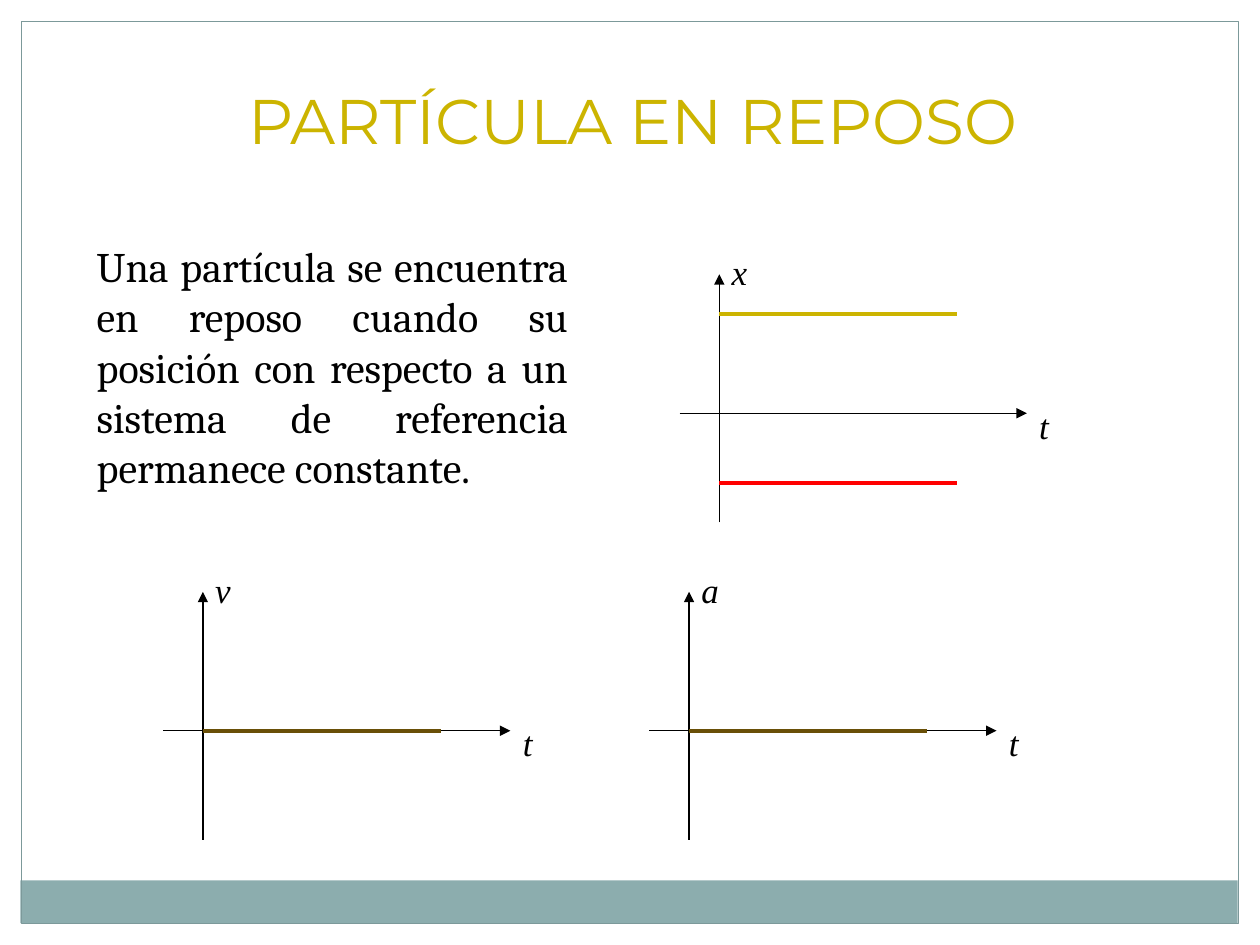
import pptx
import pptx.dml.color
import pptx.enum.shapes
import pptx.enum.text
import pptx.oxml
import pptx.oxml.ns
import pptx.util
from pptx.util import Cm

THEME = {
    "black": "000000", "gold": "CCB400", "red": "FF0000", "brown": "694F07",
    "band": "8CADAE", "frame": "7C999A",
    "title_font": "Montserrat", "body_font": "Cambria", "label_font": "Times New Roman",
    "title_size": 36, "body_size": 24, "label_size": 20,
    "thin": 0.75, "thick": 2.25,
}


def write(shape, text, role, color, alignment, italic=False):
    frame = shape.text_frame
    frame.text = text
    frame.word_wrap = True
    frame.vertical_anchor = pptx.enum.text.MSO_ANCHOR.TOP
    paragraph = frame.paragraphs[0]
    paragraph.alignment = alignment
    font = paragraph.runs[0].font
    font.name = THEME[role + "_font"]
    font.size = pptx.util.Pt(THEME[role + "_size"])
    font.italic = italic
    font.color.rgb = pptx.dml.color.RGBColor.from_string(THEME[color])


def draw_line(shapes, start, end, color, width, arrow=False):
    connector = shapes.add_connector(
        pptx.enum.shapes.MSO_CONNECTOR.STRAIGHT,
        *(Cm(value) for value in (*start, *end)))
    connector.line.color.rgb = pptx.dml.color.RGBColor.from_string(THEME[color])
    connector.line.width = pptx.util.Pt(THEME[width])
    properties = connector._element.spPr
    if arrow:
        head = pptx.oxml.parse_xml(
            '<a:tailEnd %s type="triangle"/>' % pptx.oxml.ns.nsdecls("a"))
        connector.line._get_or_add_ln().append(head)
    properties.append(pptx.oxml.parse_xml(
        "<a:effectLst %s/>" % pptx.oxml.ns.nsdecls("a")))


presentation = pptx.Presentation()
presentation.slide_width = Cm(25.4)
presentation.slide_height = Cm(19.05)
slide = presentation.slides.add_slide(presentation.slide_layouts[5])
align = pptx.enum.text.PP_ALIGN

# Bottom band and slide frame
rectangle = pptx.enum.shapes.MSO_SHAPE.RECTANGLE
band = slide.shapes.add_shape(rectangle, Cm(0.41), Cm(17.75), Cm(24.54), Cm(0.86))
band.fill.solid()
band.fill.fore_color.rgb = pptx.dml.color.RGBColor.from_string(THEME["band"])
band.line.fill.background()
border = slide.shapes.add_shape(rectangle, Cm(0.43), Cm(0.43), Cm(24.54), Cm(18.19))
border.fill.background()
border.line.color.rgb = pptx.dml.color.RGBColor.from_string(THEME["frame"])
border.line.width = pptx.util.Pt(THEME["thin"])
for shape in (band, border):
    shape.shadow.inherit = False

# Title
title = slide.shapes.title
title.left, title.top, title.width, title.height = Cm(1.9), Cm(1.52), Cm(21.7), Cm(2.41)
write(title, "PARTÍCULA EN REPOSO", "title", "gold", align.CENTER)

# Definition
definition = slide.shapes.add_textbox(Cm(1.7), Cm(4.72), Cm(10), Cm(6.4))
write(definition,
      "Una partícula se encuentra en reposo cuando su posición con respecto "
      "a un sistema de referencia permanece constante.",
      "body", "black", align.JUSTIFY)

# Graphs: quantity, origin, and constant values as (height above the t axis, colour)
graphs = [
    ("a", 13.89, 14.73, [(0, "brown")]),
    ("v", 4.09, 14.73, [(0, "brown")]),
    ("x", 14.5, 8.33, [(2, "gold"), (-1.4, "red")]),
]
for quantity, x, y, values in graphs:
    # Axes and their labels
    axes = slide.shapes.add_group_shape().shapes
    draw_line(axes, (x - 0.8, y), (x + 6.2, y), "black", "thin", arrow=True)
    draw_line(axes, (x, y + 2.2), (x, y - 2.8), "black", "thin", arrow=True)
    for text, left, top in ((quantity, x, y - 3.4), ("t", x + 6.2, y - 0.3)):
        label = axes.add_textbox(Cm(left), Cm(top), Cm(1), Cm(1.1))
        write(label, text, "label", "black", align.LEFT, italic=True)

    # Constant values over time
    for height, color in values:
        draw_line(slide.shapes, (x, y - height), (x + 4.8, y - height), color, "thick")

presentation.save("out.pptx")
